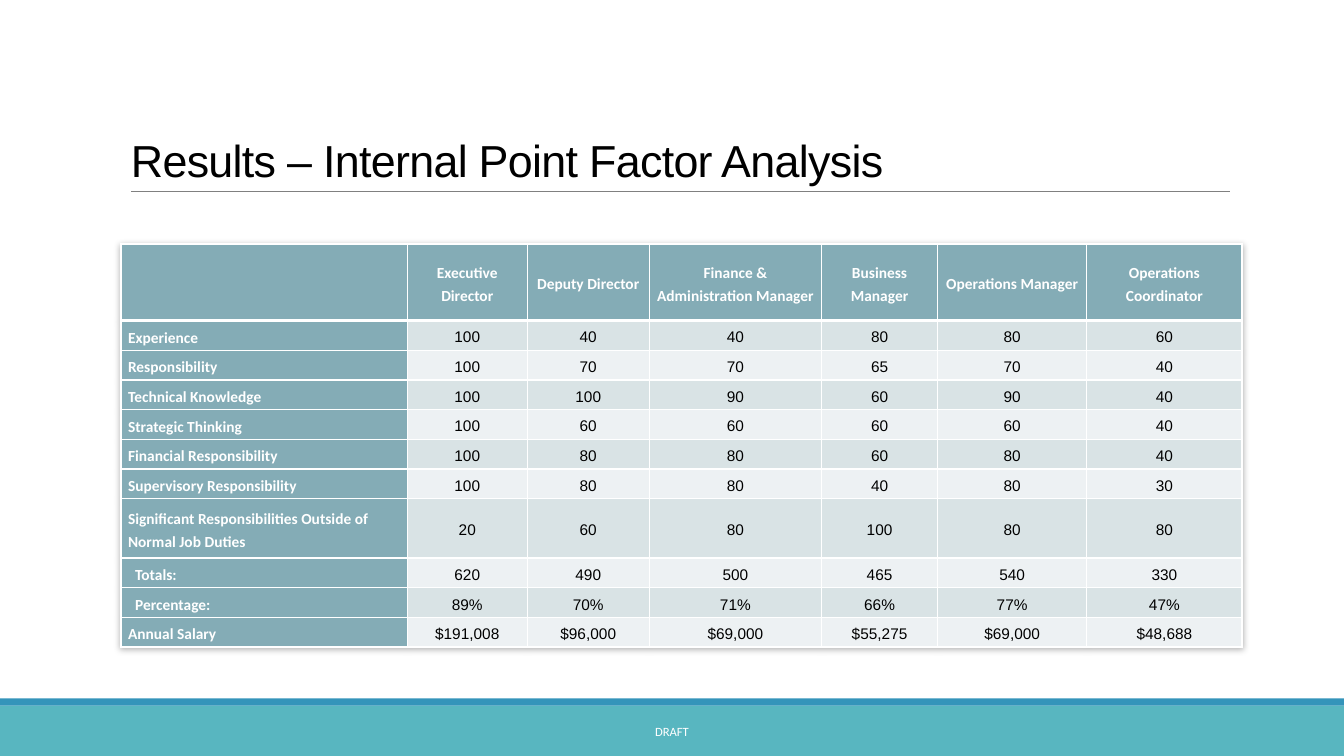
from dataclasses import dataclass

from lxml import etree
from pptx import Presentation
from pptx import util as u
from pptx.dml.color import RGBColor
from pptx.enum import shapes, text
from pptx.oxml import parse_xml
from pptx.oxml.ns import nsdecls, qn

WHITE = RGBColor(0xFF, 0xFF, 0xFF)
BLACK = RGBColor(0, 0, 0)
GRAY = RGBColor(0x80, 0x80, 0x80)
TEAL = RGBColor(0x58, 0xB6, 0xC0)
BLUE = RGBColor(0x34, 0x94, 0xBA)
HEADING_FILL = RGBColor(0x84, 0xAC, 0xB6)
BAND_FILLS = (RGBColor(0xD9, 0xE3, 0xE5), RGBColor(0xED, 0xF1, 0xF3))

SLIDE_WIDTH, SLIDE_HEIGHT = 13.33, 7.5
TABLE_HEIGHT, HEADER_HEIGHT = 4.0, 0.76
CELL_INSET = 0.07
COLUMN_WIDTHS = (2.84, 1.19, 1.21, 1.71, 1.15, 1.48, 1.54)
POSITIONS = ("Executive Director", "Deputy Director", "Finance & Administration Manager",
             "Business Manager", "Operations Manager", "Operations Coordinator")


@dataclass
class Factor:
    label: str
    values: tuple
    lines: int = 1
    indent: float = 0


@dataclass
class Band:
    top: float
    height: float
    color: RGBColor


@dataclass
class Caption:
    words: str
    box: tuple
    font: str
    size: float
    color: RGBColor
    align: text.PP_ALIGN
    anchor: text.MSO_ANCHOR
    line_spacing: float = 1
    tracking: int = 0  # hundredths of a point


FACTORS = (
    Factor("Experience", (100, 40, 40, 80, 80, 60)),
    Factor("Responsibility", (100, 70, 70, 65, 70, 40)),
    Factor("Technical Knowledge", (100, 100, 90, 60, 90, 40)),
    Factor("Strategic Thinking", (100, 60, 60, 60, 60, 40)),
    Factor("Financial Responsibility", (100, 80, 80, 60, 80, 40)),
    Factor("Supervisory Responsibility", (100, 80, 80, 40, 80, 30)),
    Factor("Significant Responsibilities Outside of Normal Job Duties",
           (20, 60, 80, 100, 80, 80), lines=2),
    Factor("Totals:", (620, 490, 500, 465, 540, 330), indent=0.07),
    Factor("Percentage:", ("89%", "70%", "71%", "66%", "77%", "47%"), indent=0.07),
    Factor("Annual Salary",
           ("$191,008", "$96,000", "$69,000", "$55,275", "$69,000", "$48,688")),
)
BANDS = (Band(7, 0.5, TEAL), Band(6.93, 0.07, BLUE))
CAPTIONS = (
    Caption("Results – Internal Point Factor Analysis", (1.2, 0.31, 11, 1.59), "Arial", 32,
            BLACK, text.PP_ALIGN.LEFT, text.MSO_ANCHOR.BOTTOM, 0.85, -50),
    Caption("DRAFT", (4.03, 7.06, 5.27, 0.4), "Calibri", 9,
            WHITE, text.PP_ALIGN.CENTER, text.MSO_ANCHOR.MIDDLE),
)


def style_run(run, font: str, size: float, color: RGBColor, bold: bool = False) -> None:
    run.font.name = font
    run.font.size = u.Pt(size)
    run.font.color.rgb = color
    run.font.bold = bold


def draw_band(slide, band: Band) -> None:
    strip = slide.shapes.add_shape(shapes.MSO_SHAPE.RECTANGLE, 0, u.Inches(band.top),
                                   u.Inches(SLIDE_WIDTH), u.Inches(band.height))
    strip.shadow.inherit = False
    strip.fill.solid()
    strip.fill.fore_color.rgb = band.color
    strip.line.fill.background()


def draw_title_rule(slide) -> None:
    rule = slide.shapes.add_connector(shapes.MSO_CONNECTOR.STRAIGHT, u.Inches(1.3),
                                      u.Inches(1.9), u.Inches(12.2), u.Inches(1.9))
    rule.line.color.rgb = GRAY
    rule.line.width = u.Pt(0.5)
    etree.SubElement(rule._element.spPr, qn("a:effectLst"))


def draw_caption(slide, caption: Caption) -> None:
    frame = slide.shapes.add_textbox(*map(u.Inches, caption.box)).text_frame
    frame.word_wrap = True
    frame.vertical_anchor = caption.anchor
    frame.text = caption.words
    paragraph = frame.paragraphs[0]
    paragraph.alignment = caption.align
    paragraph.line_spacing = caption.line_spacing
    run = paragraph.runs[0]
    style_run(run, caption.font, caption.size, caption.color)
    if caption.tracking:
        run.font._element.set("spc", str(caption.tracking))


def set_borders(cell, bottom: float) -> None:
    properties = cell._tc.get_or_add_tcPr()
    widths = {"lnL": 1, "lnR": 1, "lnT": 1, "lnB": bottom}
    for position, (side, width) in enumerate(widths.items()):
        properties.insert(position, parse_xml(
            f'<a:{side} {nsdecls("a")} w="{u.Pt(width)}"><a:solidFill>'
            f'<a:srgbClr val="{WHITE}"/></a:solidFill></a:{side}>'))


def fill_cell(cell, words: str, fill: RGBColor, heading: bool, centered: bool,
              indent: float = 0, bottom: float = 1) -> None:
    cell.fill.solid()
    cell.fill.fore_color.rgb = fill
    set_borders(cell, bottom)
    cell.vertical_anchor = text.MSO_ANCHOR.MIDDLE
    cell.margin_left = u.Inches(CELL_INSET + indent)
    cell.margin_right = u.Inches(CELL_INSET)
    cell.margin_top = cell.margin_bottom = 0
    cell.text_frame.text = words
    paragraph = cell.text_frame.paragraphs[0]
    paragraph.alignment = text.PP_ALIGN.CENTER if centered else text.PP_ALIGN.LEFT
    paragraph.line_spacing = 1.25
    for run in paragraph.runs:
        style_run(run, "Calibri" if heading else "Arial", 11,
                  WHITE if heading else BLACK, heading)


def draw_scores(slide) -> None:
    scores = slide.shapes.add_table(
        len(FACTORS) + 1, len(COLUMN_WIDTHS), u.Inches(1.2), u.Inches(2.42),
        u.Inches(sum(COLUMN_WIDTHS)), u.Inches(TABLE_HEIGHT)).table
    scores._tbl.tblPr.insert(0, parse_xml(
        f'<a:effectLst {nsdecls("a")}><a:outerShdw blurRad="50800" dist="12700" dir="5400000">'
        '<a:srgbClr val="000000"><a:alpha val="30000"/></a:srgbClr>'
        '</a:outerShdw></a:effectLst>'))
    for column, width in zip(scores.columns, COLUMN_WIDTHS):
        column.width = u.Inches(width)

    # Header row
    scores.rows[0].height = u.Inches(HEADER_HEIGHT)
    for column, position in enumerate(("", *POSITIONS)):
        fill_cell(scores.cell(0, column), position, HEADING_FILL, True, True, bottom=3)

    # Factor rows share the remaining height by their number of lines
    line_height = (TABLE_HEIGHT - HEADER_HEIGHT) / sum(factor.lines for factor in FACTORS)
    for row, factor in enumerate(FACTORS, start=1):
        scores.rows[row].height = u.Inches(line_height * factor.lines)
        fill_cell(scores.cell(row, 0), factor.label, HEADING_FILL, True, False, factor.indent)
        for column, value in enumerate(factor.values, start=1):
            fill_cell(scores.cell(row, column), str(value),
                      BAND_FILLS[(row - 1) % 2], False, True)


def main() -> None:
    deck = Presentation()
    deck.slide_width = u.Inches(SLIDE_WIDTH)
    deck.slide_height = u.Inches(SLIDE_HEIGHT)
    slide = deck.slides.add_slide(deck.slide_layouts[6])

    # Footer bands and title rule
    for band in BANDS:
        draw_band(slide, band)
    draw_title_rule(slide)

    # Title, footer label and score table
    for caption in CAPTIONS:
        draw_caption(slide, caption)
    draw_scores(slide)

    deck.save("out.pptx")


if __name__ == "__main__":
    main()
